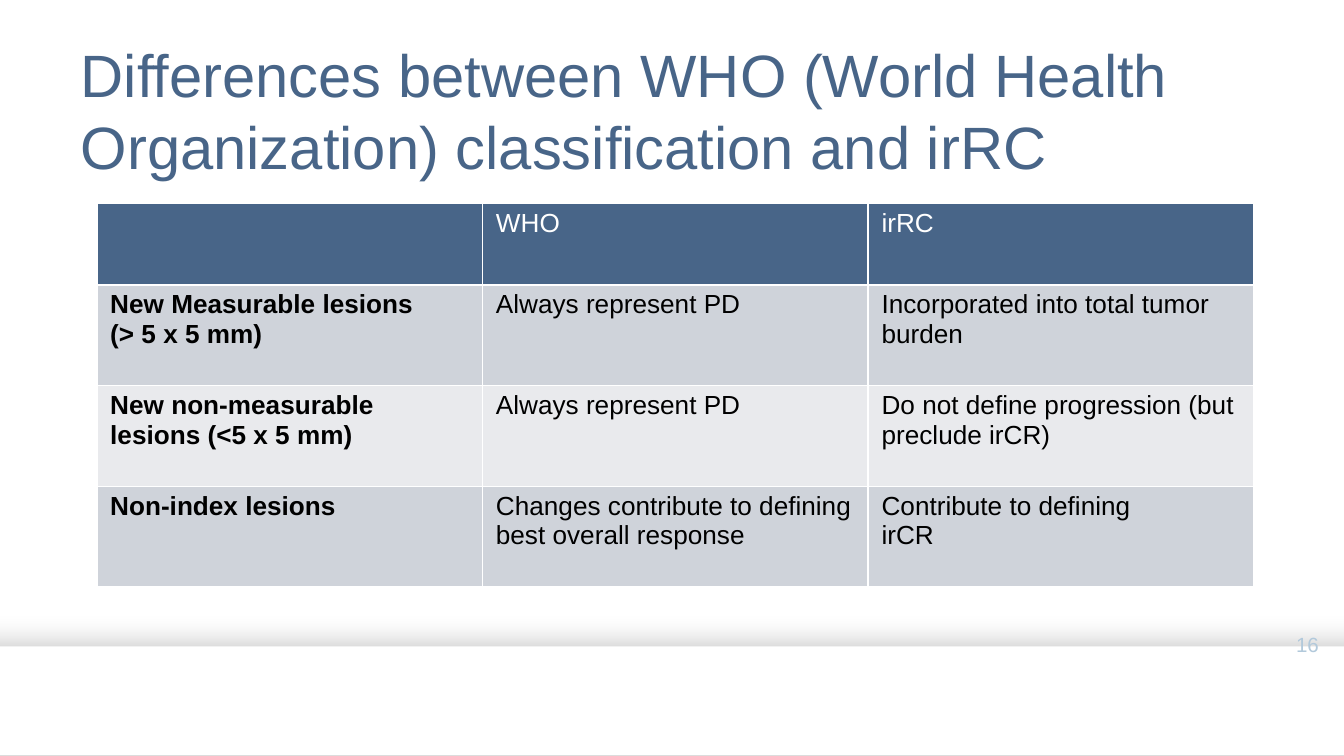
import pptx
import pptx.util
import pptx.oxml
import pptx.oxml.ns
import pptx.dml.color
import pptx.enum.shapes
import pptx.enum.text

W = 10
H = W * 9 / 16
FONT = "Arial"
COLORS = {
    "blue": "486588",
    "white": "FFFFFF",
    "black": "000000",
    "odd": "CFD3DA",
    "even": "E9EAED",
    "number": "B2C9DB",
}
ROWS = [
    ["", "WHO", "irRC"],
    ["New Measurable lesions\n(> 5 x 5 mm)", "Always represent PD",
     "Incorporated into total tumor burden"],
    ["New non-measurable lesions (<5 x 5 mm)", "Always represent PD",
     "Do not define progression (but preclude irCR)"],
    ["Non-index lesions", "Changes contribute to defining best overall response",
     "Contribute to defining\nirCR"],
]
HEADER_SHARE = 0.61 / 2.86


def rgb(name):
    return pptx.dml.color.RGBColor.from_string(COLORS[name])


def share(x, y, w, h):
    return [pptx.util.Inches(v) for v in (x * W, y * H, w * W, h * H)]


def write(tf, text, size, color, bold=False, align=pptx.enum.text.PP_ALIGN.LEFT):
    tf.text = text
    for p in tf.paragraphs:
        p.alignment = align
        p.font.name = FONT
        p.font.size = pptx.util.Pt(size)
        p.font.bold = bold
        p.font.color.rgb = rgb(color)


def add_footer_band(s, box):
    band = s.shapes.add_shape(pptx.enum.shapes.MSO_SHAPE.RECTANGLE, *box)
    band.fill.solid()
    band.fill.fore_color.rgb = rgb("white")
    band.line.fill.background()
    band._element.spPr.append(pptx.oxml.parse_xml(
        f'<a:effectLst {pptx.oxml.ns.nsdecls("a")}>'
        '<a:outerShdw blurRad="222250" dist="0" dir="16200000" rotWithShape="0">'
        f'<a:srgbClr val="{COLORS["black"]}"><a:alpha val="27000"/></a:srgbClr>'
        '</a:outerShdw></a:effectLst>'))
    s.shapes._spTree.insert(2, band._element)


def place_title(s, box, text):
    title = s.shapes.title
    title.left, title.top, title.width, title.height = box
    tf = title.text_frame
    tf.word_wrap = True
    tf.auto_size = pptx.enum.text.MSO_AUTO_SIZE.NONE
    tf.vertical_anchor = pptx.enum.text.MSO_ANCHOR.TOP
    write(tf, text, 32, "blue")


def add_comparison_table(s, box, rows):
    table = s.shapes.add_table(len(rows), len(rows[0]), *box).table
    width, height = box[2:]
    header = int(height * HEADER_SHARE)
    for column in table.columns:
        column.width = width // len(rows[0])
    for i, texts in enumerate(rows):
        table.rows[i].height = header if i == 0 else (height - header) // (len(rows) - 1)
        fill = "blue" if i == 0 else "odd" if i % 2 else "even"
        for j, text in enumerate(texts):
            cell = table.cell(i, j)
            cell.fill.solid()
            cell.fill.fore_color.rgb = rgb(fill)
            cell.margin_left = cell.margin_right = pptx.util.Inches(0.1)
            cell.margin_top = cell.margin_bottom = pptx.util.Inches(0.04)
            write(cell.text_frame, text, 14, "black" if i else "white", bold=i > 0 and j == 0)


def add_page_number(s, box, text):
    sp = s.shapes.add_shape(pptx.enum.shapes.MSO_SHAPE.DOUBLE_BRACKET, *box)
    sp.adjustments[0] = 0.18
    sp.shadow.inherit = False
    sp.fill.background()
    sp.line.fill.background()
    tf = sp.text_frame
    tf.vertical_anchor = pptx.enum.text.MSO_ANCHOR.MIDDLE
    write(tf, text, 11, "number", align=pptx.enum.text.PP_ALIGN.RIGHT)


def main():
    prs = pptx.Presentation()
    prs.slide_width, prs.slide_height = pptx.util.Inches(W), pptx.util.Inches(H)
    s = prs.slides.add_slide(prs.slide_layouts[5])
    add_footer_band(s, share(-0.026, 4.81 / H, 1.073, 0.81 / H))
    place_title(s, share(0.05, 0.23 / H, 0.911, 0.94 / H),
                "Differences between WHO (World Health Organization) classification and irRC")
    add_comparison_table(s, share(0.072, 1.51 / H, 0.861, 2.86 / H), ROWS)
    add_page_number(s, share(0.933, 4.63 / H, 0.06, 0.33 / H), "16")
    prs.save("out.pptx")


if __name__ == "__main__":
    main()
